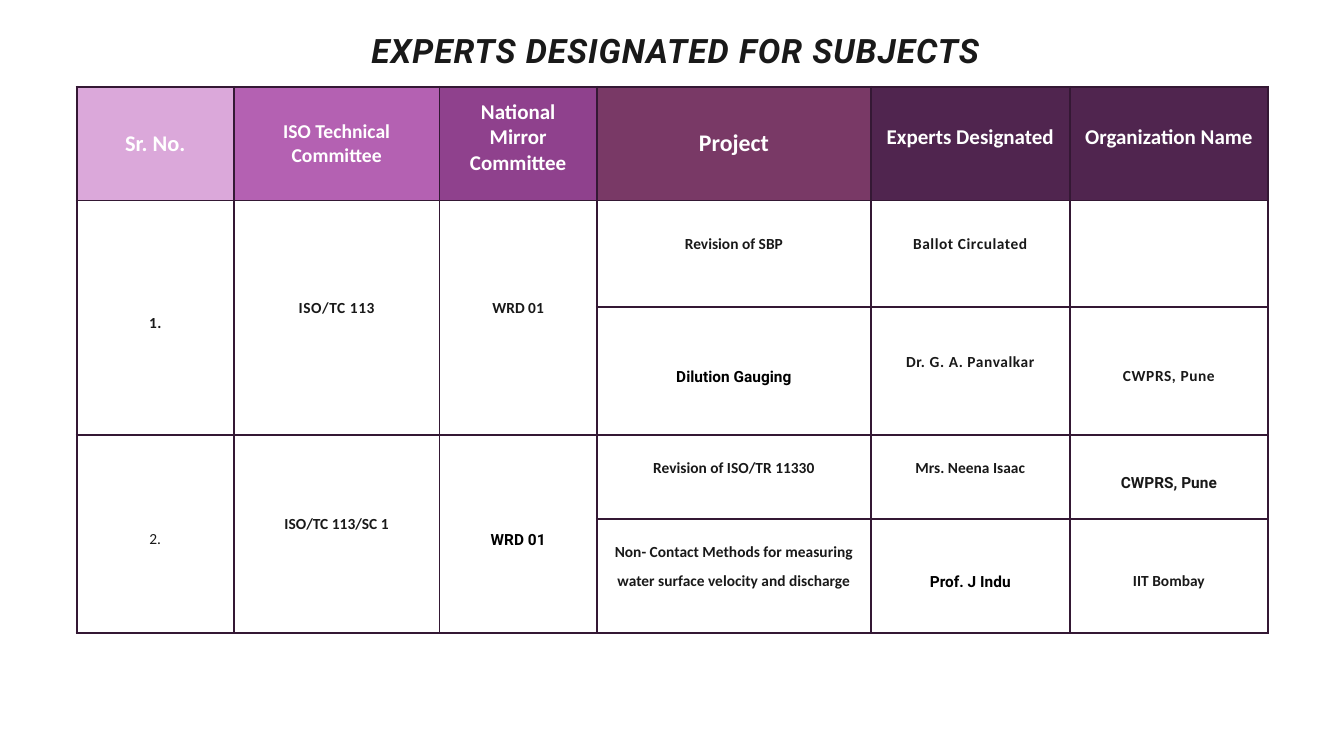
from lxml.etree import SubElement
from pptx import Presentation
from pptx.dml.color import RGBColor
from pptx.enum.text import MSO_ANCHOR, MSO_AUTO_SIZE, PP_ALIGN
from pptx.oxml.ns import qn
from pptx.util import Inches, Pt

TITLE_ONLY = 5
INK, BLACK, WHITE, BORDER = "191919", "000000", "FFFFFF", "341834"
PADDING = 0.12
BODY_LINE = 21
LIFT = BODY_LINE / 72
COLUMN_WIDTHS = [1.56, 2.04, 1.56, 2.72, 1.97, 1.97]
ROW_HEIGHTS = [1.13, 1.06, 1.27, 0.83, 1.13]

# Text, size, fill, extra bottom padding
HEADERS = [
    ("Sr. No.", 16, "DBA8DA", 0),
    ("ISO Technical Committee", 14, "B461B2", 0),
    ("National Mirror Committee", 15, "8F418D", PADDING),
    ("Project", 17, "793966", 0),
    ("Experts Designated", 15, "50254F", PADDING),
    ("Organization Name", 15, "50254F", PADDING),
]

PLAIN = {}
SPACED = {"spacing": 0.4}
ROBOTO = {"font": "Roboto", "color": BLACK}
# Row, column, text, run format, extra bottom padding
ENTRIES = [
    (1, 0, "1.", SPACED, 0),
    (1, 1, "ISO/TC 113", SPACED, LIFT),
    (1, 2, "WRD 01", PLAIN, LIFT),
    (1, 3, "Revision of SBP", PLAIN, LIFT),
    (1, 4, "Ballot Circulated", SPACED, LIFT),
    (2, 3, "Dilution Gauging", ROBOTO, 0),
    (2, 4, "Dr. G. A. Panvalkar", SPACED, LIFT),
    (2, 5, "CWPRS, Pune", SPACED, 0),
    (3, 0, "2.", {"bold": False}, 0),
    (3, 1, "ISO/TC 113/SC 1", PLAIN, LIFT),
    (3, 2, "WRD 01", ROBOTO, 0),
    (3, 3, "Revision of ISO/TR 11330", PLAIN, LIFT),
    (3, 4, "Mrs. Neena Isaac", PLAIN, LIFT),
    (3, 5, "CWPRS, Pune", {"font": "Roboto"}, 0),
    (4, 3, "Non- Contact Methods for measuring water surface velocity and discharge",
     PLAIN, LIFT),
    (4, 4, "Prof. J Indu", ROBOTO, 0),
    (4, 5, "IIT Bombay", PLAIN, 0),
]


def rgb(value):
    return RGBColor.from_string(value)


def add_span(para, text, size, font="Calibri", color=INK, bold=True, italic=False, spacing=0):
    span = para.add_run()
    span.text = text
    span.font.size = Pt(size)
    span.font.name = font
    span.font.bold = bold
    span.font.italic = italic
    span.font.color.rgb = rgb(color)
    if spacing:
        span.font._element.set("spc", str(round(spacing * 100)))


def add_title(page):
    title = page.shapes.title
    title.left, title.top = Inches(2.45), Inches(0.26)
    title.width, title.height = Inches(8.5), Inches(0.43)
    frame = title.text_frame
    frame.margin_left = frame.margin_right = frame.margin_top = frame.margin_bottom = 0
    frame.vertical_anchor = MSO_ANCHOR.TOP
    frame.auto_size = MSO_AUTO_SIZE.NONE
    para = frame.paragraphs[0]
    para.alignment = PP_ALIGN.CENTER
    para.line_spacing = Pt(31.4)
    add_span(para, "EXPERTS DESIGNATED FOR SUBJECTS", 24, "Roboto", italic=True, spacing=0.7)


def style_cell(cell, fill):
    """Set the borders first, since the fill must follow them in the XML."""
    properties = cell._tc.get_or_add_tcPr()
    for side in ("a:lnL", "a:lnR", "a:lnT", "a:lnB"):
        line = SubElement(properties, qn(side), w=str(Pt(1.5)))
        SubElement(SubElement(line, qn("a:solidFill")), qn("a:srgbClr"), val=BORDER)
    cell.fill.solid()
    cell.fill.fore_color.rgb = rgb(fill)
    cell.vertical_anchor = MSO_ANCHOR.MIDDLE
    cell.margin_left = cell.margin_right = Inches(PADDING)
    cell.margin_top = cell.margin_bottom = Inches(PADDING)


def write_cell(cell, text, size, lift, line=None, **run_format):
    cell.margin_bottom = Inches(PADDING + lift)
    para = cell.text_frame.paragraphs[0]
    para.alignment = PP_ALIGN.CENTER
    if line:
        para.line_spacing = Pt(line)
    add_span(para, text, size, **run_format)


def add_experts_table(page):
    table = page.shapes.add_table(
        len(ROW_HEIGHTS), len(COLUMN_WIDTHS), Inches(0.76), Inches(0.86),
        Inches(sum(COLUMN_WIDTHS)), Inches(sum(ROW_HEIGHTS))).table
    table.first_row = table.horz_banding = False
    for column, width in zip(table.columns, COLUMN_WIDTHS):
        column.width = Inches(width)
    for row, height in zip(table.rows, ROW_HEIGHTS):
        row.height = Inches(height)
        for cell in row.cells:
            style_cell(cell, WHITE)
    for top in (1, 3):
        for column in range(3):
            table.cell(top, column).merge(table.cell(top + 1, column))
    for column, (text, size, fill, lift) in enumerate(HEADERS):
        cell = table.cell(0, column)
        cell.fill.fore_color.rgb = rgb(fill)
        write_cell(cell, text, size, lift, color=WHITE)
    for row, column, text, run_format, lift in ENTRIES:
        write_cell(table.cell(row, column), text, 11, lift, BODY_LINE, **run_format)


def main():
    deck = Presentation()
    deck.slide_width, deck.slide_height = Inches(13.33), Inches(7.5)
    page = deck.slides.add_slide(deck.slide_layouts[TITLE_ONLY])
    add_title(page)
    add_experts_table(page)
    deck.save("out.pptx")


if __name__ == "__main__":
    main()
